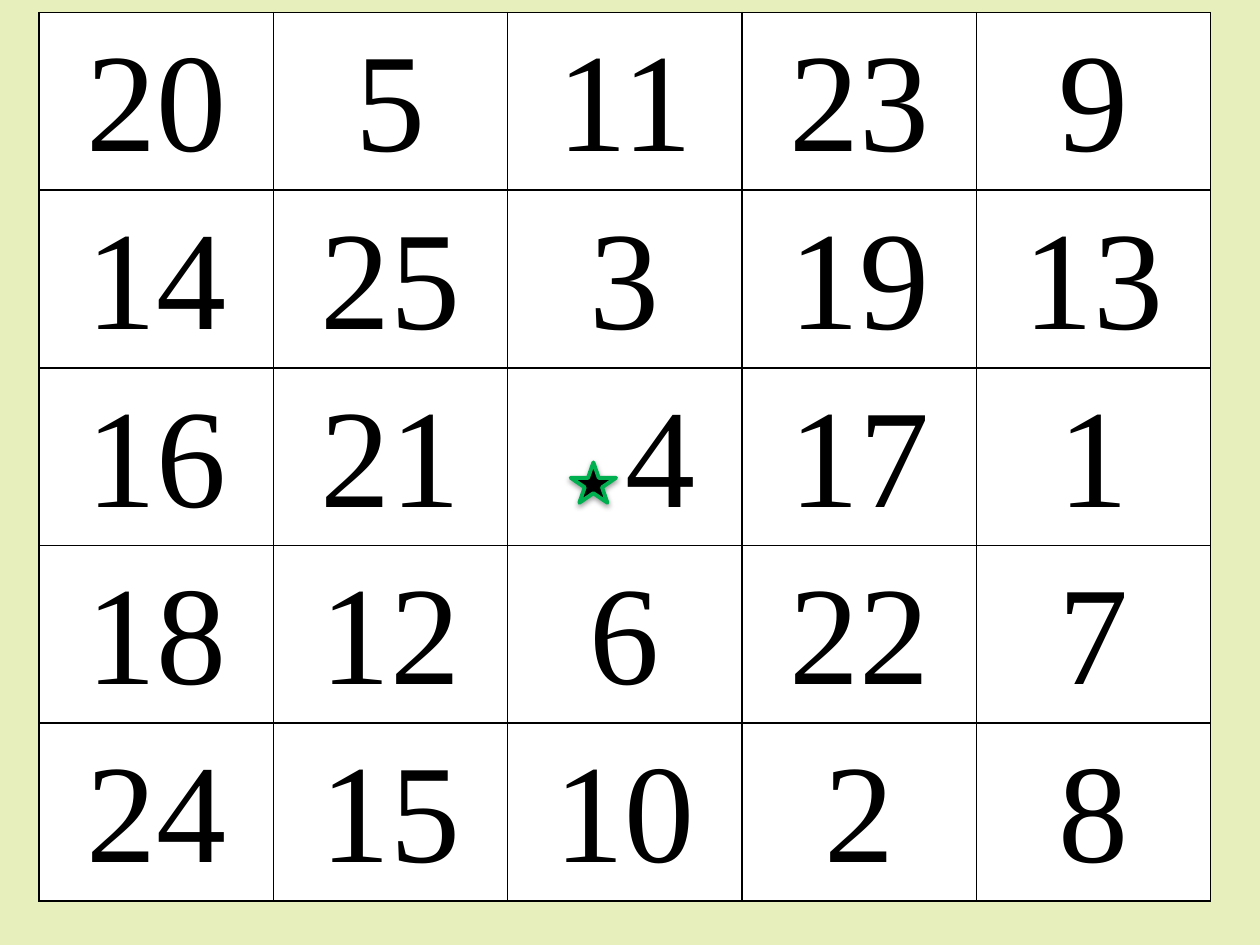
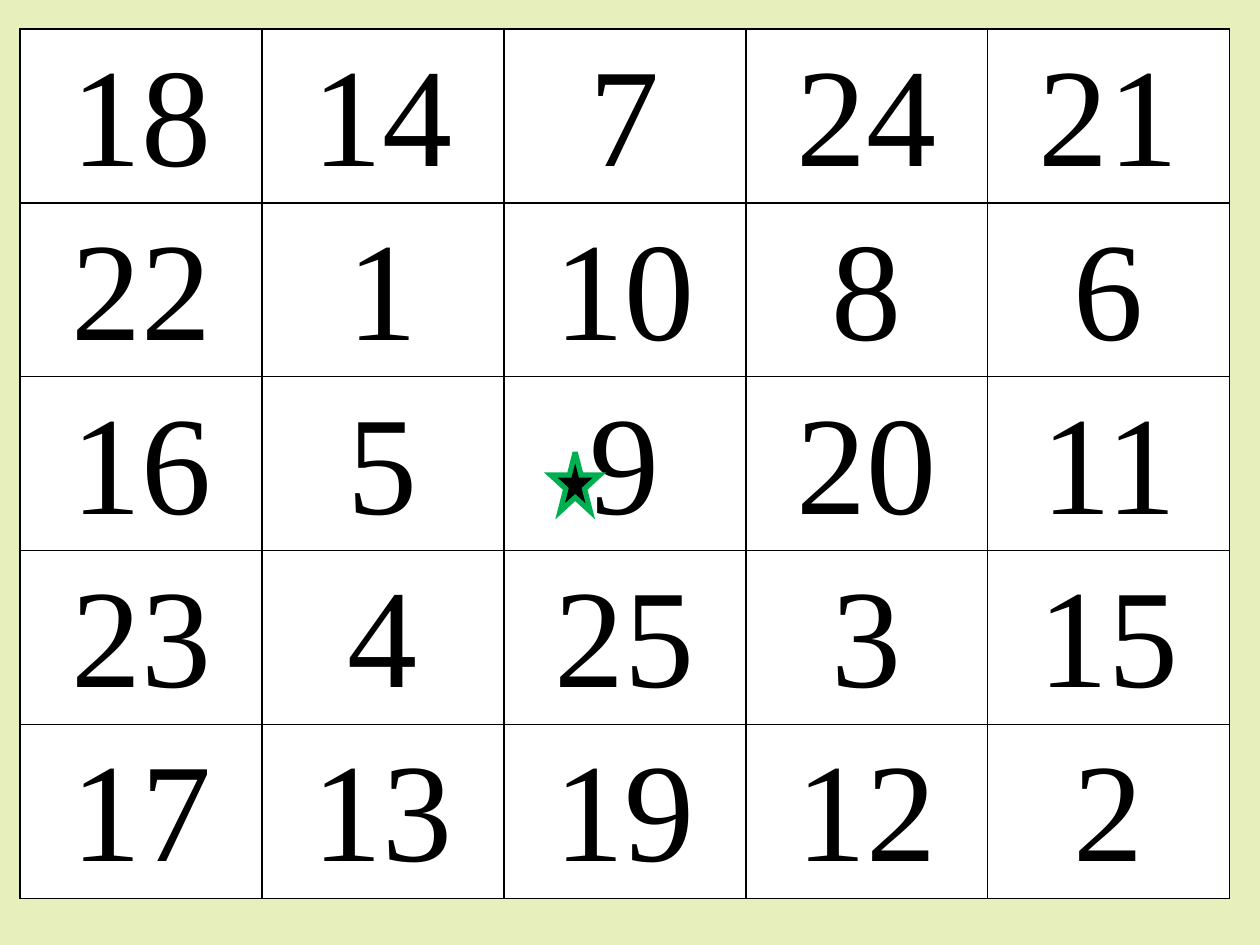
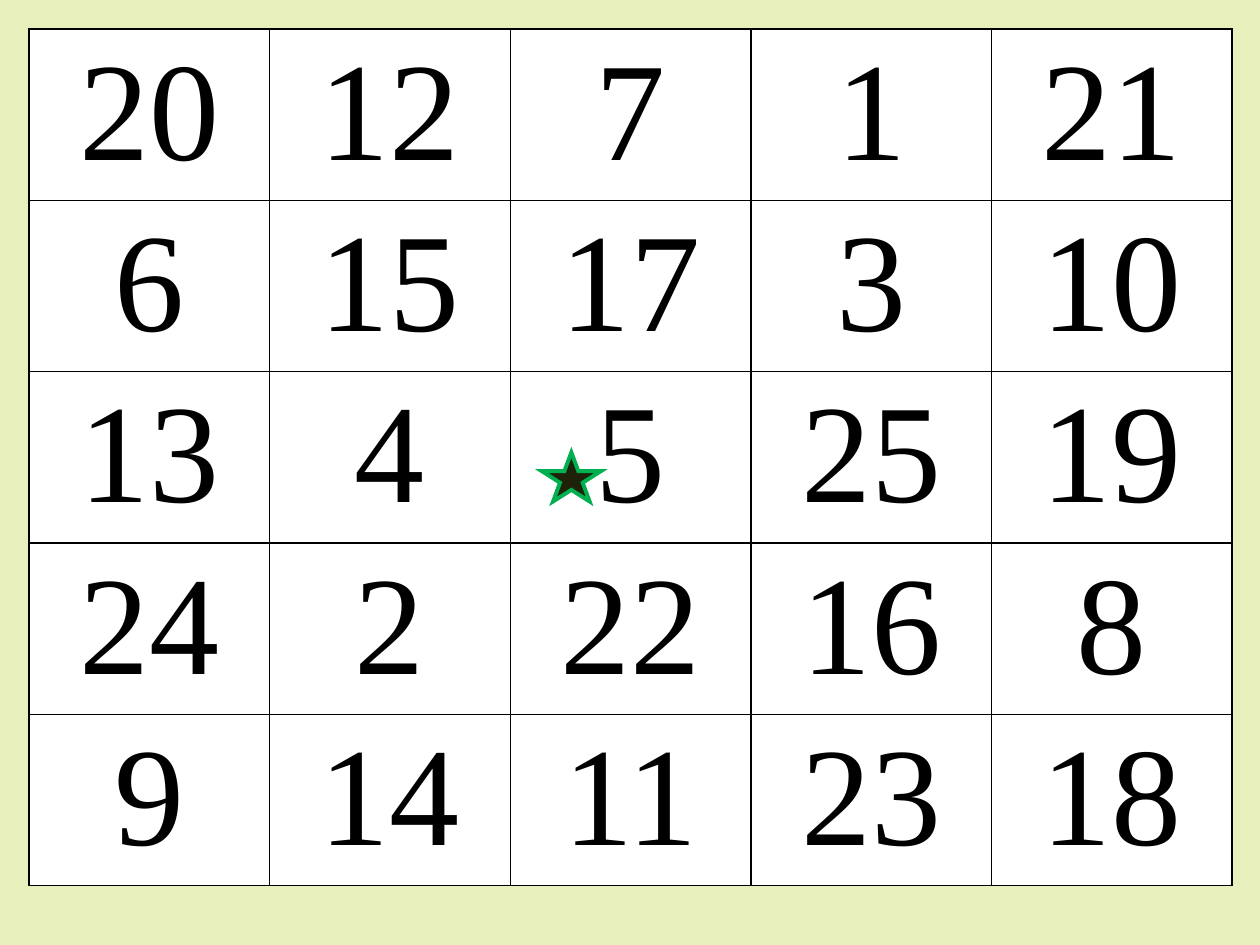
from dataclasses import dataclass

from lxml import etree
from pptx import Presentation
from pptx.dml.color import RGBColor
from pptx.enum.shapes import MSO_SHAPE
from pptx.enum.text import MSO_ANCHOR, PP_ALIGN
from pptx.oxml import parse_xml
from pptx.oxml.ns import nsdecls, qn
from pptx.slide import Slide
from pptx.table import _Cell
from pptx.util import Inches, Pt

STAR = MSO_SHAPE.STAR_5_POINT
CENTER = PP_ALIGN.CENTER
MIDDLE = MSO_ANCHOR.MIDDLE
TOP = MSO_ANCHOR.TOP

BACKGROUND = RGBColor(0xE7, 0xEF, 0xBD)
WHITE = RGBColor(0xFF, 0xFF, 0xFF)
BLACK = RGBColor(0x00, 0x00, 0x00)
GREEN = RGBColor(0x00, 0xB0, 0x50)
DARK_OLIVE = RGBColor(0x1E, 0x22, 0x08)

NUMBER_FONT = "Times New Roman"
NUMBER_SIZE = 80
BLANK_LAYOUT = 6
GRID_SIZE = 5
CENTER_CELL = (GRID_SIZE // 2, GRID_SIZE // 2)
CELL_MARGIN = 0.1
BORDER_SIDES = ("lnL", "lnR", "lnT", "lnB")


@dataclass(frozen=True)
class Star:
    left: float
    top: float
    width: float
    height: float
    line_width: float
    fill: RGBColor = BLACK
    join: str = "miter"
    shadow: bool = False


@dataclass(frozen=True)
class NumberGrid:
    left: float
    top: float
    column_width: float
    row_height: float
    numbers: tuple[tuple[int, ...], ...]
    star: Star
    anchor: MSO_ANCHOR = MIDDLE
    center_indent: float = 0


GRIDS = (
    NumberGrid(
        0.31, 0.1, 1.86, 1.41,
        (
            (20, 5, 11, 23, 9),
            (14, 25, 3, 19, 13),
            (16, 21, 4, 17, 1),
            (18, 12, 6, 22, 7),
            (24, 15, 10, 2, 8),
        ),
        Star(4.53, 3.67, 0.36, 0.32, 2.25, join="round", shadow=True),
        center_indent=0.56,
    ),
    NumberGrid(
        0.16, 0.23, 1.92, 1.38,
        (
            (18, 14, 7, 24, 21),
            (22, 1, 10, 8, 6),
            (16, 5, 9, 20, 11),
            (23, 4, 25, 3, 15),
            (17, 13, 19, 12, 2),
        ),
        Star(4.37, 3.59, 0.39, 0.47, 3),
    ),
    NumberGrid(
        0.23, 0.23, 1.91, 1.36,
        (
            (20, 12, 7, 1, 21),
            (6, 15, 17, 3, 10),
            (13, 4, 5, 25, 19),
            (24, 2, 22, 16, 8),
            (9, 14, 11, 23, 18),
        ),
        Star(4.3, 3.59, 0.47, 0.39, 2.25, fill=DARK_OLIVE),
        anchor=TOP,
    ),
)


def write_text(
    cell: _Cell,
    text: str,
    *,
    size: float = NUMBER_SIZE,
    font: str = NUMBER_FONT,
    color: RGBColor = BLACK,
    anchor: MSO_ANCHOR = MIDDLE,
    indent: float = 0,
) -> None:
    cell.vertical_anchor = anchor
    cell.margin_left = Inches(CELL_MARGIN + indent)
    cell.margin_right = Inches(CELL_MARGIN)
    cell.margin_top = Inches(0.05)
    cell.margin_bottom = 0
    paragraph = cell.text_frame.paragraphs[0]
    paragraph.alignment = CENTER
    run = paragraph.add_run()
    run.text = text
    run.font.size = Pt(size)
    run.font.name = font
    run.font.color.rgb = color


def add_borders(cell: _Cell, color: RGBColor = BLACK, width: float = 1) -> None:
    properties = cell._tc.get_or_add_tcPr()
    for side in BORDER_SIDES:
        properties.append(parse_xml(
            f'<a:{side} {nsdecls("a")} w="{Pt(width)}">'
            f'<a:solidFill><a:srgbClr val="{color}"/></a:solidFill></a:{side}>'
        ))


def add_number_table(slide: Slide, grid: NumberGrid) -> None:
    table = slide.shapes.add_table(
        GRID_SIZE, GRID_SIZE, Inches(grid.left), Inches(grid.top),
        Inches(grid.column_width * GRID_SIZE), Inches(grid.row_height * GRID_SIZE),
    ).table
    table.first_row = False
    table.horz_banding = False
    for column in table.columns:
        column.width = Inches(grid.column_width)
    for row in table.rows:
        row.height = Inches(grid.row_height)
    for row_index, numbers in enumerate(grid.numbers):
        for column_index, number in enumerate(numbers):
            cell = table.cell(row_index, column_index)
            is_center = (row_index, column_index) == CENTER_CELL
            write_text(
                cell, str(number), anchor=grid.anchor,
                indent=grid.center_indent if is_center else 0,
            )
            add_borders(cell)
            cell.fill.solid()
            cell.fill.fore_color.rgb = WHITE


def add_star(slide: Slide, star: Star) -> None:
    shape = slide.shapes.add_shape(
        STAR, Inches(star.left), Inches(star.top),
        Inches(star.width), Inches(star.height),
    )
    shape.shadow.inherit = False
    shape.fill.solid()
    shape.fill.fore_color.rgb = star.fill
    shape.line.color.rgb = GREEN
    shape.line.width = Pt(star.line_width)
    properties = shape._element.spPr
    etree.SubElement(properties.find(qn("a:ln")), qn(f"a:{star.join}"))
    if star.shadow:
        properties.find(qn("a:effectLst")).append(parse_xml(
            f'<a:outerShdw {nsdecls("a")} blurRad="{Pt(3.1)}" dist="{Pt(1.6)}" '
            f'dir="5400000" rotWithShape="0"><a:srgbClr val="{BLACK}">'
            '<a:alpha val="38000"/></a:srgbClr></a:outerShdw>'
        ))


def main() -> None:
    presentation = Presentation()
    presentation.slide_width = Inches(10)
    presentation.slide_height = Inches(7.5)
    background = presentation.slide_master.background.fill
    background.solid()
    background.fore_color.rgb = BACKGROUND
    for grid in GRIDS:
        slide = presentation.slides.add_slide(presentation.slide_layouts[BLANK_LAYOUT])
        add_number_table(slide, grid)
        add_star(slide, grid.star)
    presentation.save("out.pptx")


if __name__ == "__main__":
    main()
